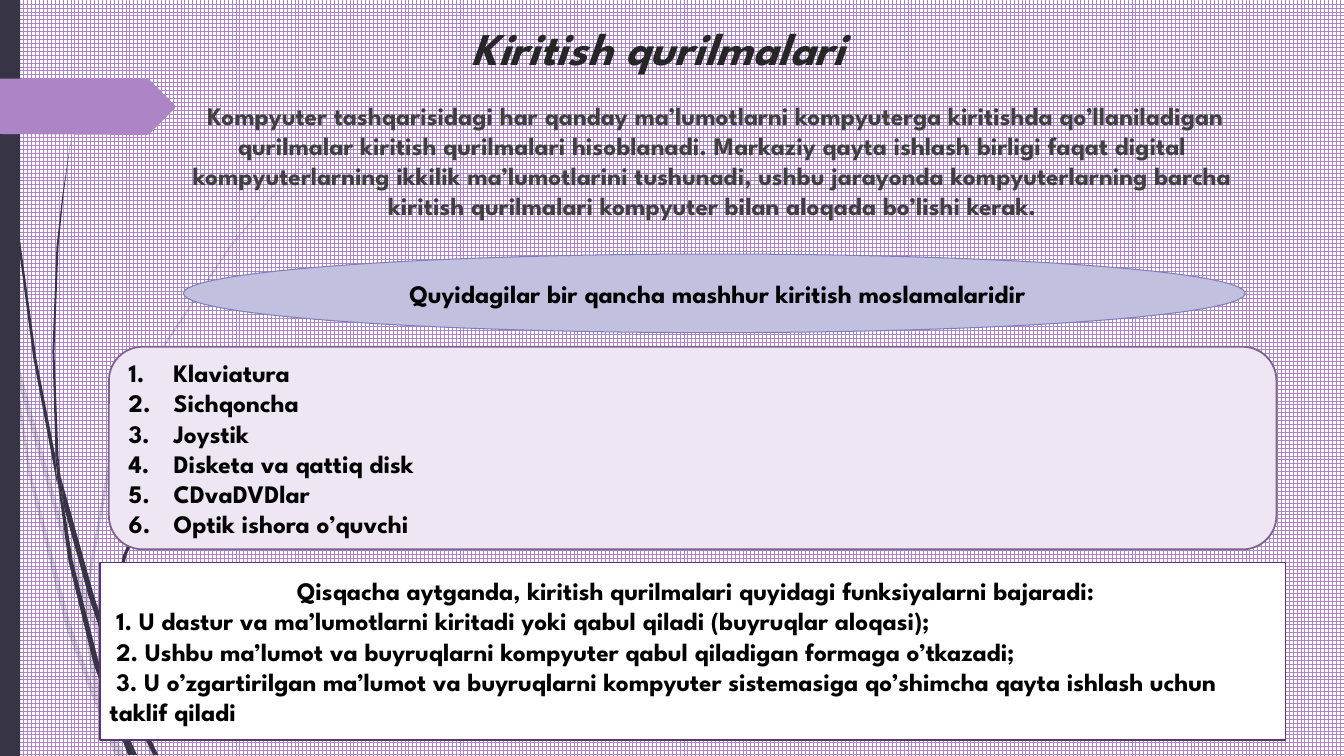
"""Build a slide on computer input devices with cards over a grid and curved wisps."""
from dataclasses import dataclass
from typing import Optional

from lxml import etree
from pptx import Presentation
from pptx import util as u
from pptx.dml.color import RGBColor
from pptx.enum import dml, shapes, text
from pptx.oxml.ns import qn

FONT = "League Spartan"
BLACK = RGBColor(0x00, 0x00, 0x00)
WHITE = RGBColor(0xFF, 0xFF, 0xFF)
TITLE_GREY = RGBColor(0x26, 0x26, 0x26)
BODY_GREY = RGBColor(0x40, 0x40, 0x40)
PURPLE = RGBColor(0xAD, 0x84, 0xC6)
NAVY = RGBColor(0x37, 0x35, 0x45)
LAVENDER = RGBColor(0xC1, 0xC0, 0xDF)
LAVENDER_EDGE = RGBColor(0x81, 0x7E, 0xBE)
LILAC = RGBColor(0xEF, 0xE6, 0xF4)
LILAC_EDGE = RGBColor(0x80, 0x62, 0x92)
PLUM = RGBColor(0x5A, 0x34, 0x71)

LEFT, CENTER = text.PP_ALIGN.LEFT, text.PP_ALIGN.CENTER
HANGING = 0.38
Outline = tuple[tuple[float, float], ...]


@dataclass(frozen=True)
class WispGroup:
    opacity: int
    outlines: tuple[Outline, ...]


@dataclass(frozen=True)
class Card:
    preset: shapes.MSO_SHAPE
    box: tuple[float, float, float, float]
    fill: RGBColor
    edge: Optional[RGBColor] = None
    edge_width: float = 1.25
    heading: str = ""
    lines: tuple[str, ...] = ()
    numbered: bool = False


FAINT_WISPS = WispGroup(20, (
    ((0.11, 3.5), (0.09, 3.22), (0, 2.82), (0, 2.99), (0.1, 3.44)),
    ((0.58, 5.22), (0.84, 5.99), (0.85, 5.86), (0.62, 5.2), (0.14, 3.45), (0.17, 3.76)),
    ((0.92, 6.07), (0.88, 5.96), (0.88, 6.1), (1.23, 6.94), (1.5, 7.5), (1.55, 7.5),
     (1.27, 6.92)),
    ((1.19, 7.5), (1.24, 7.5), (1.05, 7.11)),
    ((0.93, 6.83), (0.7, 6.19), (0.31, 4.69), (0.17, 3.76), (0.11, 3.5), (0.28, 4.7),
     (0.65, 6.21), (0.92, 6.93), (1.01, 7.14), (0.99, 7.07)),
    ((0.84, 5.99), (0.87, 6.46), (0.93, 6.83), (0.96, 6.92), (1.05, 7.11), (1.03, 7.06),
     (0.91, 6.46), (0.88, 6.1), (0.88, 6.08)),
    ((0.88, 5.84), (1.1, 4.62), (1.6, 3.49), (2.29, 2.45), (2.68, 1.98), (2.9, 1.75),
     (3.12, 1.54), (3.12, 1.53), (2.89, 1.75), (2.68, 1.97), (2.28, 2.44), (1.58, 3.48),
     (1.07, 4.61), (0.85, 5.84), (0.85, 5.86), (0.88, 5.96)),
    ((1.01, 7.14), (1.14, 7.5), (1.19, 7.5)),
    ((0.88, 6.08), (0.88, 6.1), (0.88, 5.96), (0.85, 5.86), (0.84, 5.99)),
    ((0.96, 6.92), (0.93, 6.83), (0.99, 7.07), (1.01, 7.14), (1.19, 7.5), (1.05, 7.11)),
))
DARK_WISPS = WispGroup(100, (
    ((0.07, 1.1), (0.17, 2.33), (0.33, 3.55), (0.56, 4.77), (0.57, 4.81), (0.55, 4.57),
     (0.55, 4.53), (0.36, 3.55), (0.19, 2.32), (0.08, 1.09), (0.05, 0.48), (0.04, 0),
     (0.03, 0), (0.04, 0.48)),
    ((0.88, 5.92), (1.06, 6.45), (1.06, 6.33), (1.06, 6.31), (0.93, 5.9), (0.6, 4.72),
     (0.64, 5.05)),
    ((1.13, 6.49), (1.1, 6.41), (1.11, 6.56), (1.32, 7.08), (1.52, 7.49), (1.57, 7.49),
     (1.36, 7.06)),
    ((1.1, 6.91), (0.98, 6.57), (0.72, 5.56), (0.64, 5.05), (0.57, 4.77), (0.68, 5.57),
     (0.93, 6.59), (1.11, 7.08), (1.17, 7.22), (1.16, 7.17)),
    ((0.6, 4.72), (0.58, 4.53), (0.54, 3.49), (0.58, 2.45), (0.63, 1.93), (0.7, 1.41),
     (0.62, 1.93), (0.56, 2.45), (0.52, 3.49), (0.55, 4.49)),
    ((1.33, 7.49), (1.36, 7.49), (1.22, 7.19)),
    ((0.57, 4.77), (0.64, 5.05), (0.6, 4.72), (0.55, 4.49), (0.55, 4.53)),
    ((1.11, 6.33), (1.25, 5.52), (1.58, 4.76), (2.05, 4.06), (2.31, 3.74), (2.45, 3.59),
     (2.61, 3.44), (2.6, 3.44), (2.45, 3.58), (2.31, 3.73), (2.04, 4.05), (1.56, 4.74),
     (1.22, 5.51), (1.06, 6.31), (1.1, 6.41)),
    ((1.17, 7.22), (1.27, 7.49), (1.31, 7.49)),
    ((1.16, 7.06), (1.1, 6.91), (1.16, 7.17), (1.17, 7.22), (1.3, 7.49), (1.33, 7.49),
     (1.22, 7.19)),
))
PAGE_ARROW: Outline = ((0, 0.78), (1.46, 0.78), (1.48, 0.79), (1.73, 1.04), (1.74, 1.06),
                       (1.73, 1.08), (1.48, 1.33), (1.46, 1.34), (0, 1.33))

SIDE_BAR = Card(shapes.MSO_SHAPE.RECTANGLE, (0, 0, 0.2, 7.5), NAVY)
CARDS = (
    Card(shapes.MSO_SHAPE.OVAL, (1.82, 2.52, 10.53, 0.78), LAVENDER, LAVENDER_EDGE, 0.75,
         heading=" Quyidagilar bir qancha mashhur kiritish moslamalaridir"),
    Card(shapes.MSO_SHAPE.ROUNDED_RECTANGLE, (1.08, 3.44, 11.58, 2.01), LILAC, LILAC_EDGE,
         lines=(" Klaviatura", " Sichqoncha", " Joystik", " Disketa va qattiq disk",
                " CDvaDVDlar", " Optik ishora o’quvchi"), numbered=True),
    Card(shapes.MSO_SHAPE.RECTANGLE, (0.99, 5.58, 11.76, 1.76), WHITE, PLUM,
         heading=" Qisqacha aytganda, kiritish qurilmalari quyidagi funksiyalarni bajaradi:",
         lines=(" 1. U dastur va ma’lumotlarni kiritadi yoki qabul qiladi (buyruqlar aloqasi);",
                " 2. Ushbu ma’lumot va buyruqlarni kompyuter qabul qiladigan formaga o’tkazadi;",
                " 3. U o’zgartirilgan ma’lumot va buyruqlarni kompyuter sistemasiga qo’shimcha "
                "qayta ishlash uchun taklif qiladi")),
)
TITLE = " Kiritish qurilmalari"
INTRODUCTION = (
    " Kompyuter tashqarisidagi har qanday ma’lumotlarni kompyuterga kiritishda "
    "qo’llaniladigan qurilmalar kiritish qurilmalari hisoblanadi. Markaziy qayta ishlash "
    "birligi faqat digital kompyuterlarning ikkilik ma’lumotlarini tushunadi, ushbu "
    "jarayonda kompyuterlarning barcha kiritish qurilmalari kompyuter bilan aloqada "
    "bo’lishi kerak.")


def write_text(paragraph, content: str, *, size: float = 18, color: RGBColor = BLACK,
               italic: bool = False, align=LEFT, margin: float = 0, indent: float = 0,
               before: float = 0, bullet: str = "a:buNone") -> None:
    run = paragraph.add_run()
    run.text = content
    run.font.name, run.font.size = FONT, u.Pt(size)
    run.font.bold, run.font.italic = True, italic
    run.font.color.rgb = color
    paragraph.alignment = align
    paragraph.space_before = u.Pt(before)
    properties = paragraph._p.get_or_add_pPr()
    properties.set("marL", str(u.Inches(margin)))
    properties.set("indent", str(u.Inches(indent)))
    marker = etree.SubElement(properties, qn(bullet))
    if bullet == "a:buAutoNum":
        marker.set("type", "arabicPeriod")


def paint(shape, color: RGBColor, opacity: int = 100) -> None:
    shape.shadow.inherit = False
    shape.fill.solid()
    shape.fill.fore_color.rgb = color
    shape.line.fill.background()
    if opacity < 100:
        solid = shape._element.spPr.find(qn("a:solidFill"))
        etree.SubElement(solid[0], qn("a:alpha")).set("val", str(opacity * 1000))


def draw_outline(container, outline: Outline, color: RGBColor, opacity: int = 100) -> None:
    start, *others = [(u.Inches(x), u.Inches(y)) for x, y in outline]
    builder = container.build_freeform(*start)
    builder.add_line_segments(others, close=True)
    paint(builder.convert_to_shape(), color, opacity)


def draw_card(slide, card: Card) -> None:
    shape = slide.shapes.add_shape(card.preset, *map(u.Inches, card.box))
    paint(shape, card.fill)
    if card.edge is not None:
        shape.line.color.rgb = card.edge
        shape.line.width = u.Pt(card.edge_width)
    frame = shape.text_frame
    frame.word_wrap = True
    frame.vertical_anchor = text.MSO_ANCHOR.MIDDLE
    list_format = (dict(margin=HANGING, indent=-HANGING, bullet="a:buAutoNum")
                   if card.numbered else {})
    entries = [(card.heading, dict(align=CENTER))] if card.heading else []
    entries += [(line, list_format) for line in card.lines]
    for position, (content, style) in enumerate(entries):
        paragraph = frame.add_paragraph() if position else frame.paragraphs[0]
        write_text(paragraph, content, **style)


def fill_placeholder(shape, box: tuple[float, ...], anchor, content: str, **style) -> None:
    shape.left, shape.top, shape.width, shape.height = map(u.Inches, box)
    frame = shape.text_frame
    frame.word_wrap = True
    frame.auto_size = text.MSO_AUTO_SIZE.NONE
    frame.vertical_anchor = anchor
    write_text(frame.paragraphs[0], content, align=CENTER, **style)
    shape._element.getparent().append(shape._element)


def main() -> None:
    presentation = Presentation()
    presentation.slide_width, presentation.slide_height = u.Inches(13.33), u.Inches(7.5)
    slide = presentation.slides.add_slide(presentation.slide_layouts[1])
    background = slide.background.fill
    background.patterned()
    background.pattern = dml.MSO_PATTERN.LARGE_GRID
    background.fore_color.rgb, background.back_color.rgb = PURPLE, WHITE

    for wisps in (FAINT_WISPS, DARK_WISPS):
        group = slide.shapes.add_group_shape()
        for outline in wisps.outlines:
            draw_outline(group.shapes, outline, NAVY, wisps.opacity)
    draw_card(slide, SIDE_BAR)
    draw_outline(slide.shapes, PAGE_ARROW, PURPLE)

    fill_placeholder(slide.shapes.title, (3.65, 0.17, 5.64, 0.61), text.MSO_ANCHOR.MIDDLE,
                     TITLE, size=32.4, color=TITLE_GREY, italic=True)
    fill_placeholder(slide.placeholders[1], (1.4, 0.94, 10.95, 1.45), text.MSO_ANCHOR.TOP,
                     INTRODUCTION, color=BODY_GREY, margin=HANGING, before=10)
    for card in CARDS:
        draw_card(slide, card)
    presentation.save("out.pptx")


if __name__ == "__main__":
    main()
